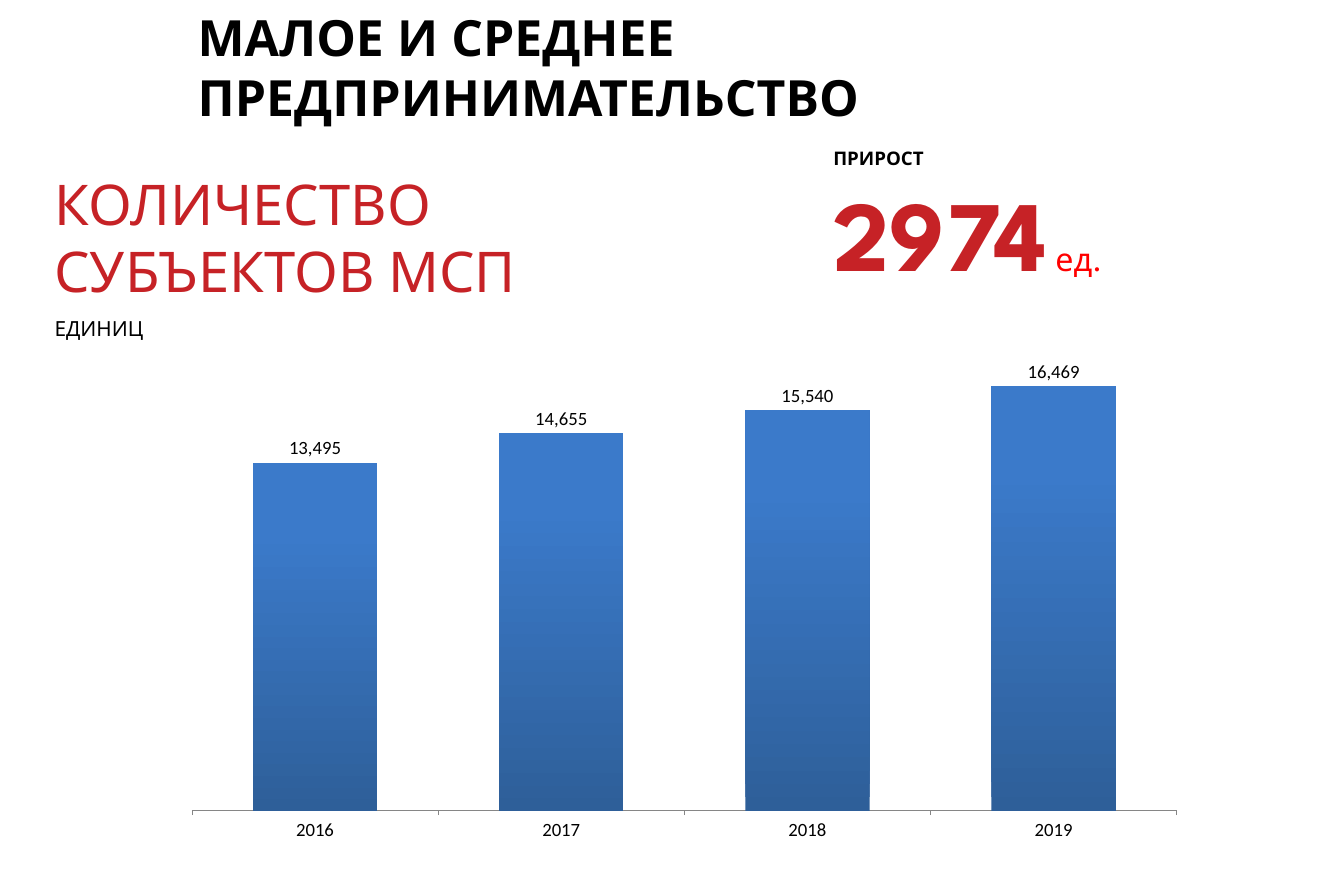
"""Slide on the number of small and medium businesses."""
from dataclasses import dataclass

import pptx
import pptx.chart.data
import pptx.dml.color
import pptx.enum.chart
import pptx.enum.text
import pptx.util

WIDE, HIGH = 17.95, 11.81
HEX = {"black": "000000", "brand": "C62226", "red": "FF0000",
       "deep": "2E5F99", "sky": "3B7ACA", "axis": "868686"}
HEAD = "League Spartan"


@dataclass(frozen=True)
class Area:
    """Place on the slide in percent of its width and height."""
    left: float
    top: float
    width: float
    height: float

    def box(self) -> tuple:
        """Return the place as lengths."""
        sides = ((self.left, WIDE), (self.top, HIGH),
                 (self.width, WIDE), (self.height, HIGH))
        return tuple(pptx.util.Inches(part * side / 100) for part, side in sides)


@dataclass(frozen=True)
class Piece:
    """Run of text with its format."""
    text: str
    size: float
    color: str = "black"
    bold: bool = False
    face: str = HEAD


@dataclass(frozen=True)
class Block:
    """Text box made of lines of pieces."""
    area: Area
    lines: tuple


TITLE = Block(Area(13.76, 0, 85.01, 14.99), (
    (Piece("МАЛОЕ И СРЕДНЕЕ ПРЕДПРИНИМАТЕЛЬСТВО", 48, bold=True),),))
BLOCKS = (
    Block(Area(3.51, 18.71, 53.09, 20.66), (
        (Piece("КОЛИЧЕСТВО", 54, "brand"),),
        (Piece("СУБЪЕКТОВ МСП", 54, "brand"),),
        (Piece("ЕДИНИЦ", 20), Piece(" ", 31)))),
    Block(Area(61.45, 14.65, 27.19, 18.97), (
        (Piece("ПРИРОСТ", 18, bold=True), Piece(" ", 31, bold=True, face="Arial")),
        (Piece("2974", 96, "brand", True), Piece(" ", 31, "red", True),
         Piece("ед.", 31, "red")))),
)
PLOT = Area(12.76, 38.02, 76.32, 58.26)
UNITS = {"2016": 13495, "2017": 14655, "2018": 15540, "2019": 16469}


def tint(name: str) -> pptx.dml.color.RGBColor:
    """Look up a colour."""
    return pptx.dml.color.RGBColor.from_string(HEX[name])


def apply(item: object, form: dict) -> None:
    """Set attributes from format values."""
    for key, value in form.items():
        setattr(item, key, value)


def write(frame: object, lines: tuple) -> None:
    """Fill a text frame with lines."""
    for row, line in enumerate(lines):
        para = frame.add_paragraph() if row else frame.paragraphs[0]
        para.alignment = pptx.enum.text.PP_ALIGN.LEFT
        for piece in line:
            run = para.add_run()
            run.text = piece.text
            apply(run.font, {"size": pptx.util.Pt(piece.size),
                             "bold": piece.bold, "name": piece.face})
            run.font.color.rgb = tint(piece.color)


def head(slide: object) -> None:
    """Place and fill the title."""
    shape = slide.shapes.title
    apply(shape, dict(zip(("left", "top", "width", "height"), TITLE.area.box())))
    side, edge = pptx.util.Inches(0.17), pptx.util.Inches(0.09)
    apply(shape.text_frame, {
        "word_wrap": True, "auto_size": pptx.enum.text.MSO_AUTO_SIZE.NONE,
        "vertical_anchor": pptx.enum.text.MSO_ANCHOR.MIDDLE,
        "margin_left": side, "margin_right": side,
        "margin_top": edge, "margin_bottom": edge})
    write(shape.text_frame, TITLE.lines)


def graph(slide: object) -> None:
    """Draw the column chart."""
    kinds = pptx.enum.chart
    data = pptx.chart.data.CategoryChartData(number_format="#,##0")
    data.categories = list(UNITS)
    data.add_series("Series 1", list(UNITS.values()))
    chart = slide.shapes.add_chart(
        kinds.XL_CHART_TYPE.COLUMN_CLUSTERED, *PLOT.box(), data).chart
    apply(chart, {"has_legend": False, "has_title": False})
    apply(chart.font, {"size": pptx.util.Pt(18), "name": "Calibri"})
    chart.font.color.rgb = tint("black")
    apply(chart.value_axis, {"visible": False, "has_major_gridlines": False,
                             "minimum_scale": 0, "maximum_scale": 18000})
    axis = chart.category_axis
    axis.major_tick_mark = kinds.XL_TICK_MARK.OUTSIDE
    axis.format.line.color.rgb = tint("axis")
    plot = chart.plots[0]
    apply(plot, {"gap_width": 98, "vary_by_categories": False,
                 "has_data_labels": True})
    apply(plot.data_labels, {
        "show_value": True, "number_format": "#,##0",
        "number_format_is_linked": False,
        "position": kinds.XL_LABEL_POSITION.OUTSIDE_END})
    fill = plot.series[0].format.fill
    fill.gradient()
    fill.gradient_angle = 90
    for stop, name, place in zip(fill.gradient_stops, ("deep", "sky"), (0, 0.8)):
        stop.color.rgb = tint(name)
        stop.position = place


def main() -> None:
    """Build and save the slide."""
    deck = pptx.Presentation()
    apply(deck, {"slide_width": pptx.util.Inches(WIDE),
                 "slide_height": pptx.util.Inches(HIGH)})
    slide = deck.slides.add_slide(deck.slide_layouts.get_by_name("Title Only"))
    graph(slide)
    for block in BLOCKS:
        frame = slide.shapes.add_textbox(*block.area.box()).text_frame
        frame.word_wrap = True
        write(frame, block.lines)
    head(slide)
    deck.save("out.pptx")


if __name__ == "__main__":
    main()
